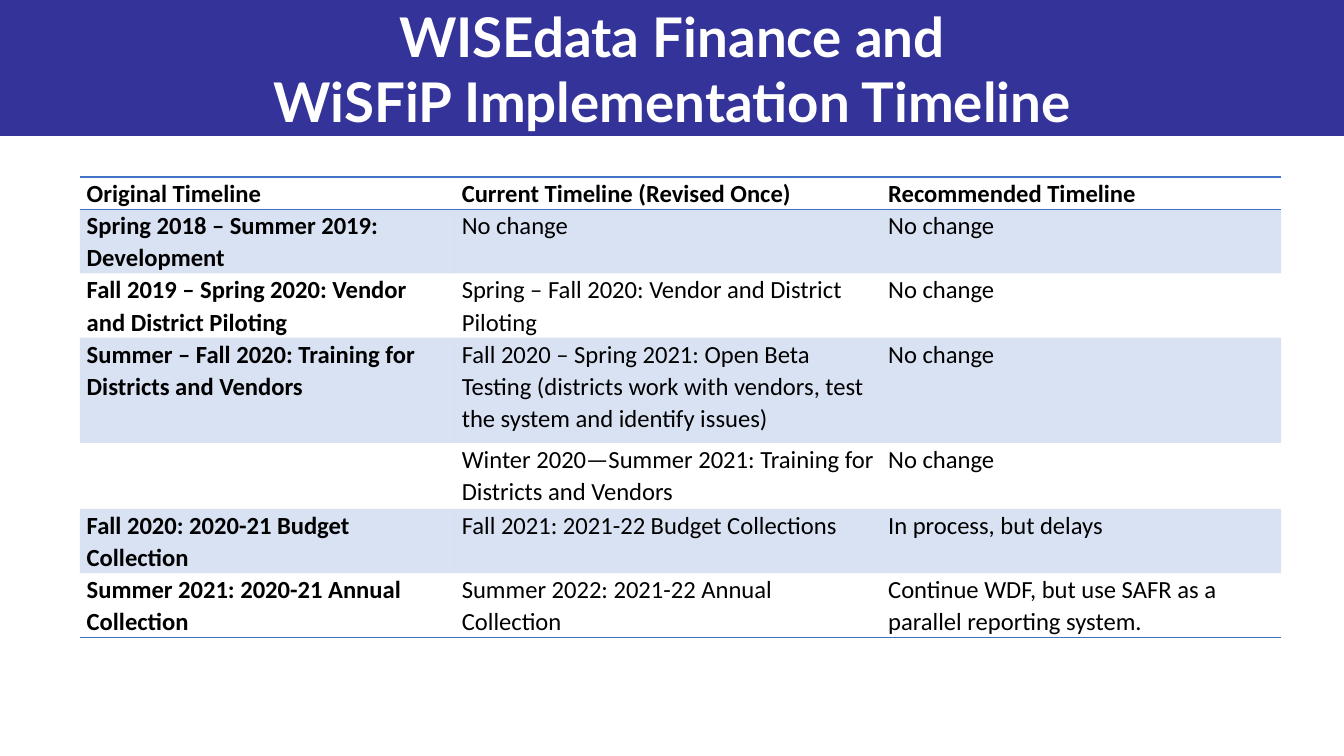
"""Build the finance implementation timeline slide."""
from lxml.etree import SubElement
from pptx import Presentation
from pptx.dml.color import RGBColor as RGB
from pptx.enum.shapes import MSO_SHAPE as Shape
from pptx.enum.text import MSO_ANCHOR as Anchor, PP_ALIGN as Align
from pptx.oxml import parse_xml
from pptx.oxml.ns import nsdecls, qn
from pptx.util import Pt

COLORS = {"banner": "333399", "title": "FFFFFF", "text": "000000", "accent": "4472C4"}
PLAIN_TABLE = "{2D5ABB26-0587-4C30-8999-92F81FD0307C}"
SLIDE_WIDTH, SLIDE_HEIGHT, BANNER_HEIGHT = 982.8, 552.96, 99.36

COLUMN_WIDTHS = [274.3, 311.8, 292.3]
ROW_HEIGHTS = [20.9, 40.3, 44.6, 77, 48.2, 44.6, 44.6]
TIMELINE = [
    ("Original Timeline", "Current Timeline (Revised Once)", "Recommended Timeline"),
    ("Spring 2018 – Summer 2019: Development", "No change", "No change"),
    ("Fall 2019 – Spring 2020: Vendor and District Piloting",
     "Spring – Fall 2020: Vendor and District Piloting", "No change"),
    ("Summer – Fall 2020: Training for Districts and Vendors",
     "Fall 2020 – Spring 2021: Open Beta Testing (districts work with vendors, "
     "test the system and identify issues)", "No change"),
    ("", "Winter 2020—Summer 2021: Training for Districts and Vendors", "No change"),
    ("Fall 2020: 2020-21 Budget Collection", "Fall 2021: 2021-22 Budget Collections",
     "In process, but delays"),
    ("Summer 2021: 2020-21 Annual Collection", "Summer 2022: 2021-22 Annual Collection",
     "Continue WDF, but use SAFR as a parallel reporting system."),
]


def write_text(frame, text, *, font, size, color, bold=False, align=Align.LEFT, spacing=None):
    paragraph = frame.paragraphs[0]
    paragraph.text = text
    paragraph.alignment = align
    paragraph.line_spacing = spacing
    for run in paragraph.runs:
        run.font.name = font
        run.font.size = Pt(size)
        run.font.bold = bold
        run.font.color.rgb = RGB.from_string(color)


class TimelineSlide:
    def __init__(self, slide, colors):
        self.slide = slide
        self.colors = colors

    def banner(self, left, top, width, height):
        band = self.slide.shapes.add_shape(
            Shape.RECTANGLE, Pt(left), Pt(top), Pt(width), Pt(height))
        band.shadow.inherit = False
        band.fill.solid()
        band.fill.fore_color.rgb = RGB.from_string(self.colors["banner"])
        band.line.fill.background()

    def title(self, text, left, top, width, height):
        heading = self.slide.shapes.add_textbox(Pt(left), Pt(top), Pt(width), Pt(height))
        frame = heading.text_frame
        frame.word_wrap = True
        frame.vertical_anchor = Anchor.MIDDLE
        write_text(frame, text, font="Lato", size=40, color=self.colors["title"],
                   bold=True, align=Align.CENTER)

    def rule(self, cell, side):
        cell._tc.get_or_add_tcPr().append(parse_xml(
            f'<a:{side} {nsdecls("a")} w="12700"><a:solidFill>'
            f'<a:srgbClr val="{self.colors["accent"]}"/></a:solidFill></a:{side}>'))

    def shade(self, cell):
        cell.fill.solid()
        cell.fill.fore_color.rgb = RGB.from_string(self.colors["accent"])
        tint = cell._tc.tcPr.find(qn("a:solidFill")).find(qn("a:srgbClr"))
        SubElement(tint, qn("a:alpha"), val="20000")

    def table(self, rows, left, top, widths, heights):
        grid = self.slide.shapes.add_table(
            len(rows), len(widths), Pt(left), Pt(top), Pt(sum(widths)), Pt(sum(heights))).table
        grid._tbl.tblPr.find(qn("a:tableStyleId")).text = PLAIN_TABLE
        for column, width in zip(grid.columns, widths):
            column.width = Pt(width)
        for row, height in zip(grid.rows, heights):
            row.height = Pt(height)
        for r, entries in enumerate(rows):
            for c, entry in enumerate(entries):
                cell = grid.cell(r, c)
                cell.margin_left = cell.margin_right = Pt(5.04)
                cell.margin_top = cell.margin_bottom = Pt(0)
                write_text(cell.text_frame, entry, font="Calibri", size=18,
                           color=self.colors["text"], bold=r == 0 or c == 0, spacing=1.07)
                if r == 0:
                    self.rule(cell, "lnT")
                if r in (0, len(rows) - 1):
                    self.rule(cell, "lnB")
                if r % 2:
                    self.shade(cell)
                else:
                    cell.fill.background()


def main():
    deck = Presentation()
    deck.slide_width, deck.slide_height = Pt(SLIDE_WIDTH), Pt(SLIDE_HEIGHT)
    page = TimelineSlide(deck.slides.add_slide(deck.slide_layouts[6]), COLORS)
    page.banner(0, 0, SLIDE_WIDTH, BANNER_HEIGHT)
    page.table(TIMELINE, 58.4, 129.4, COLUMN_WIDTHS, ROW_HEIGHTS)
    page.title("WISEdata Finance and\nWiSFiP Implementation Timeline",
               0, 0, SLIDE_WIDTH, BANNER_HEIGHT)
    deck.save("out.pptx")


if __name__ == "__main__":
    main()
